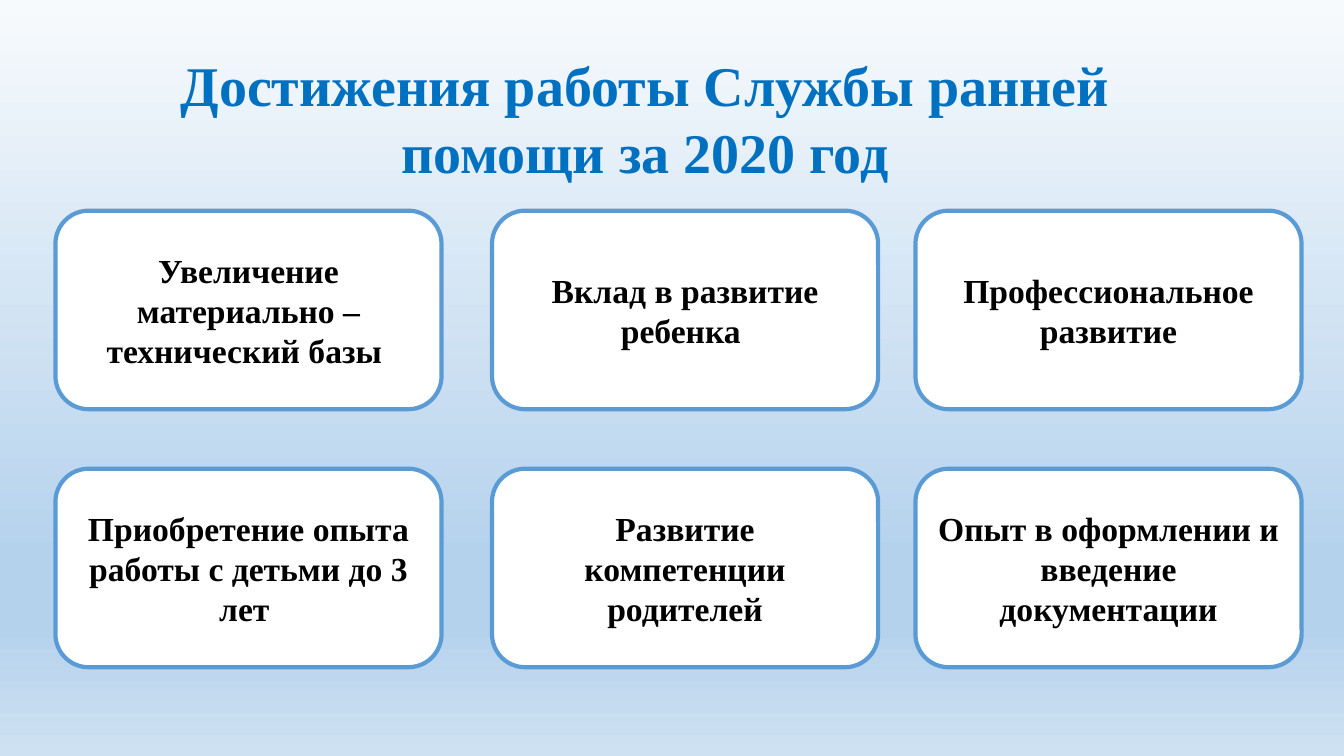
import pptx
import pptx.util
import pptx.dml.color
import pptx.enum.shapes
import pptx.enum.text
import pptx.oxml.ns
import lxml.etree

# Content
TITLE = "Достижения работы Службы ранней помощи за 2020 год"
CARDS = [
    ["Увеличение материально – технический базы ",
     "Вклад в развитие ребенка ",
     "Профессиональное развитие"],
    ["Приобретение опыта работы с детьми до 3 лет ",
     "Развитие компетенции родителей",
     "Опыт в оформлении и введение документации"],
]

# Look
FONT = "Times New Roman"
COLORS = {"title": "0070C0", "text": "000000", "card": "FFFFFF", "edge": "5B9BD5"}
SKY = [(0, "F7FAFD"), (74, "B5D2EC"), (83, "B5D2EC"), (100, "CEE1F2")]

# Grid in inches
COLS = (0.55, 4.88, 9.08)
TOP, STEP = 2.09, 2.56
WIDE, HIGH = 3.83, 1.97

inch = pptx.util.Inches
qn = pptx.oxml.ns.qn


def rgb(name):
    return pptx.dml.color.RGBColor.from_string(COLORS[name])


def write(shape, text, size, color):
    frame = shape.text_frame
    frame.word_wrap = True
    frame.text = text
    line = frame.paragraphs[0]
    line.alignment = pptx.enum.text.PP_ALIGN.CENTER
    font = line.runs[0].font
    font.name, font.size, font.bold = FONT, pptx.util.Pt(size), True
    font.color.rgb = rgb(color)
    return frame


def paint(slide):
    fill = slide.background.fill
    fill.gradient()
    fill.gradient_angle = 270
    stops = slide.element.find(".//" + qn("a:gsLst"))
    for stop in list(stops):
        stops.remove(stop)
    for share, color in SKY:
        stop = lxml.etree.SubElement(stops, qn("a:gs"), pos=str(share * 1000))
        lxml.etree.SubElement(stop, qn("a:srgbClr"), val=color)


def card(slide, left, top, text):
    box = slide.shapes.add_shape(
        pptx.enum.shapes.MSO_SHAPE.ROUNDED_RECTANGLE,
        inch(left), inch(top), inch(WIDE), inch(HIGH))
    box.shadow.inherit = False
    box.fill.solid()
    box.fill.fore_color.rgb = rgb("card")
    box.line.color.rgb = rgb("edge")
    box.line.width = pptx.util.Pt(3)
    frame = write(box, text, 24, "text")
    frame.vertical_anchor = pptx.enum.text.MSO_ANCHOR.MIDDLE


def main():
    deck = pptx.Presentation()
    deck.slide_width, deck.slide_height = inch(13.33), inch(7.5)
    slide = deck.slides.add_slide(deck.slide_layouts[6])
    paint(slide)

    # Title
    head = slide.shapes.add_textbox(inch(0.75), inch(0.45), inch(11.29), inch(1.45))
    write(head, TITLE, 40, "title")

    # Cards
    for row, texts in enumerate(CARDS):
        for left, text in zip(COLS, texts):
            card(slide, left, TOP + row * STEP, text)

    deck.save("out.pptx")


if __name__ == "__main__":
    main()
